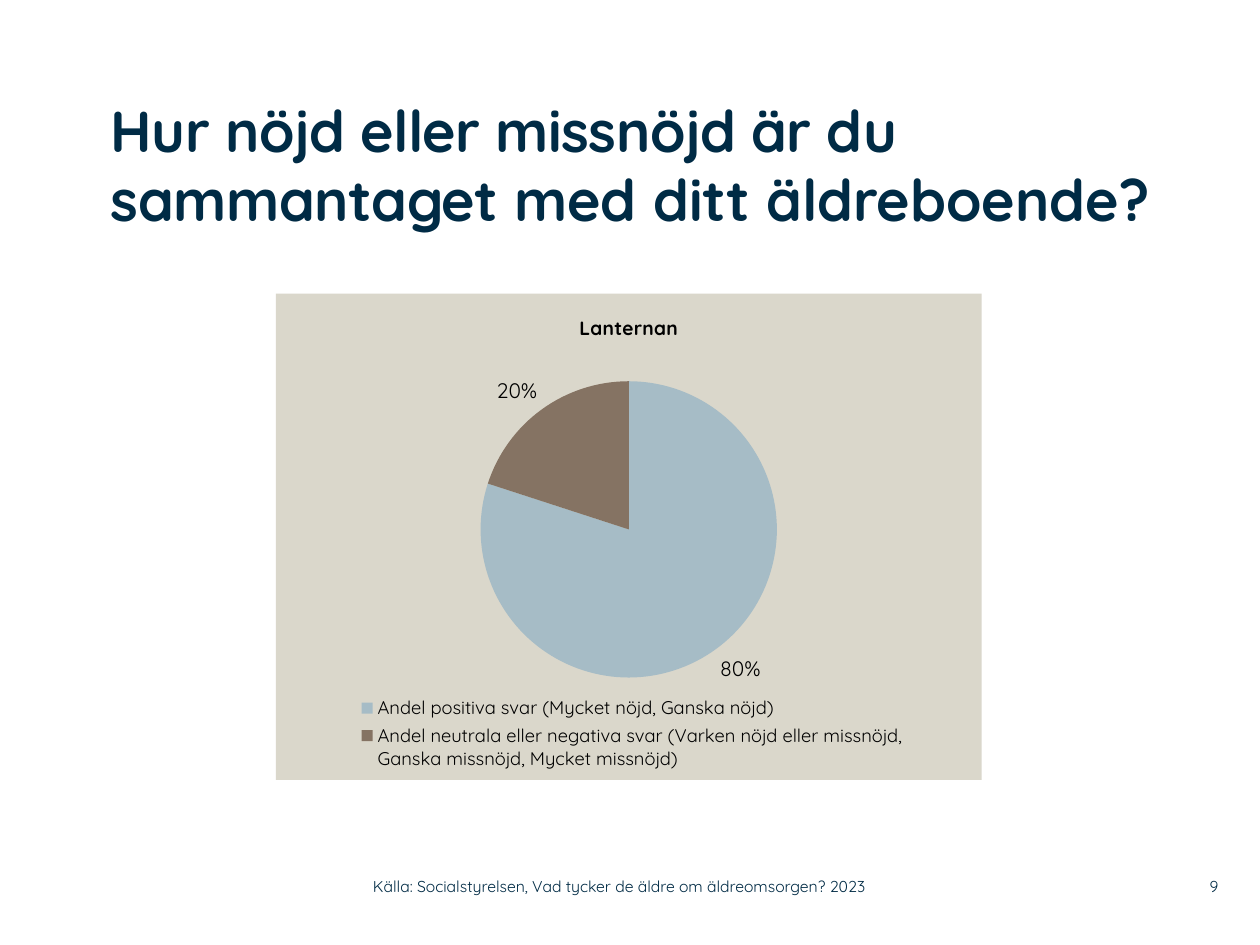
"""Build a slide with a pie chart of overall satisfaction with the care home."""
from lxml import etree
from pptx import Presentation
from pptx.chart.data import CategoryChartData
from pptx.dml.color import RGBColor
from pptx.enum.chart import XL_CHART_TYPE, XL_LABEL_POSITION, XL_LEGEND_POSITION
from pptx.enum.text import MSO_ANCHOR, PP_ALIGN
from pptx.oxml import parse_xml
from pptx.oxml.ns import nsdecls, qn
from pptx.util import Inches, Pt

PIE = XL_CHART_TYPE.PIE
OUTSIDE = XL_LABEL_POSITION.OUTSIDE_END
BOTTOM = XL_LEGEND_POSITION.BOTTOM
LEFT, RIGHT = PP_ALIGN.LEFT, PP_ALIGN.RIGHT
TOP, MIDDLE = MSO_ANCHOR.TOP, MSO_ANCHOR.MIDDLE
FACE, NAVY, BLACK, SAND = "Quicksand", "002B45", "000000", "DAD7CB"
SLICE_COLORS = ["A6BCC6", "857363"]


def color(code):
    return RGBColor.from_string(code)


def style(font, size, code, bold=False):
    font.name, font.size, font.bold = FACE, Pt(size), bold
    font.color.rgb = color(code)


deck = Presentation()
deck.slide_width, deck.slide_height = Inches(10), Inches(7.5)
page = deck.slides.add_slide(deck.slide_layouts[6])

texts = [
    ([("Hur nöjd eller missnöjd är du sammantaget ", -30), ("med ditt äldreboende?", 0)],
     (0.88, 0.75, 8.83, 1.42), 33, True, LEFT, TOP),
    ([("Källa: Socialstyrelsen, Vad tycker de äldre om äldreomsorgen? 2023", 0)],
     (2.96, 6.89, 4.43, 0.29), 9, False, LEFT, MIDDLE),
    ([("9", 0)], (9.2, 6.89, 0.47, 0.29), 9, False, RIGHT, MIDDLE),
]
for parts, place, size, bold, align, anchor in texts:
    frame = page.shapes.add_textbox(*map(Inches, place)).text_frame
    frame.margin_left = frame.margin_right = frame.margin_top = frame.margin_bottom = 0
    frame.word_wrap, frame.vertical_anchor = True, anchor
    para = frame.paragraphs[0]
    para.alignment = align
    for words, spacing in parts:
        span = para.add_run()
        span.text = words
        style(span.font, size, NAVY, bold)
        span._r.get_or_add_rPr().set("spc", str(spacing))

answers = CategoryChartData()
answers.categories = [
    "Andel positiva svar (Mycket nöjd, Ganska nöjd)",
    "Andel neutrala eller negativa svar (Varken nöjd eller missnöjd, "
    "Ganska missnöjd, Mycket missnöjd)",
]
answers.add_series("Lanternan", [80, 20])
chart = page.shapes.add_chart(
    PIE, *map(Inches, (2.19, 2.33, 5.6, 3.86)), answers).chart
style(chart.font, 18, BLACK)

chart.has_title = True
chart.chart_title.text_frame.text = "Lanternan"
style(chart.chart_title.text_frame.paragraphs[0].runs[0].font, 11, BLACK, True)

chart.has_legend = True
chart.legend.position, chart.legend.include_in_layout = BOTTOM, False
style(chart.legend.font, 10.5, BLACK)

plot = chart.plots[0]
plot.vary_by_categories = True
for index, code in enumerate(SLICE_COLORS):
    fill = plot.series[0].points[index].format.fill
    fill.solid()
    fill.fore_color.rgb = color(code)

plot.has_data_labels = True
labels = plot.data_labels
labels.show_percentage, labels.show_value = True, False
labels.number_format, labels.number_format_is_linked = "0%", False
labels.position = OUTSIDE
style(labels.font, 12, BLACK)

background = parse_xml(
    f'<c:spPr {nsdecls("c", "a")}><a:solidFill><a:srgbClr val="{SAND}"/></a:solidFill>'
    '<a:ln><a:noFill/></a:ln></c:spPr>')
chart.element.find(qn("c:chart")).addnext(background)

layouts = [
    ("c:plotArea", 0, [("layoutTarget", "inner")], (0.29, 0.18, 0.42, 0.61)),
    ("c:legend", 1, [], (0.11, 0.82, 0.79, 0.17)),
]
for name, position, target, shares in layouts:
    area = chart.element.find(".//" + qn(name))
    for old in area.findall(qn("c:layout")):
        area.remove(old)
    layout = etree.Element(qn("c:layout"))
    area.insert(position, layout)
    manual = etree.SubElement(layout, qn("c:manualLayout"))
    modes = [("xMode", "edge"), ("yMode", "edge")]
    for tag, value in target + modes + list(zip("xywh", shares)):
        etree.SubElement(manual, qn("c:" + tag)).set("val", str(value))

deck.save("out.pptx")
